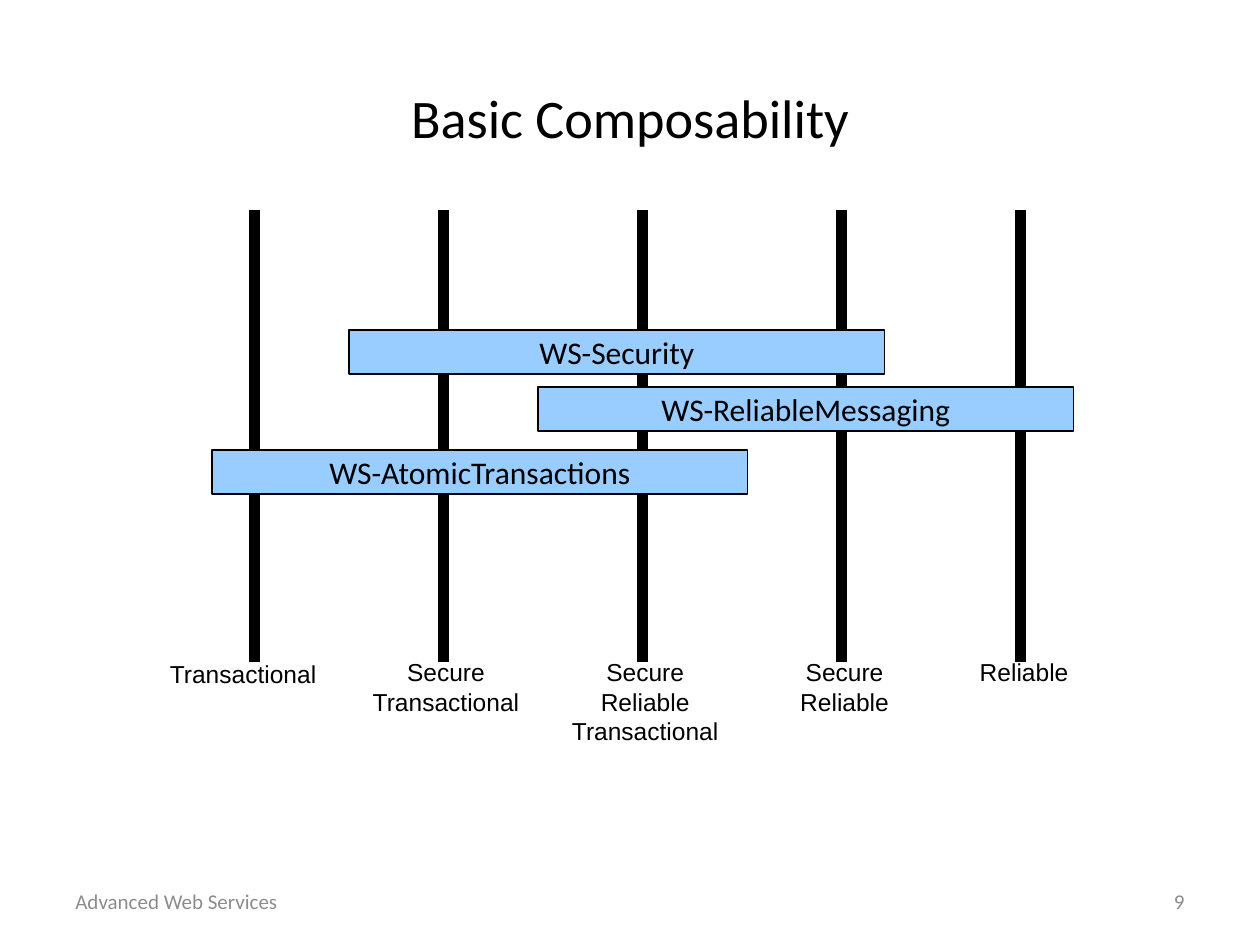
from pptx import Presentation
from pptx.dml.color import RGBColor
from pptx.enum.shapes import MSO_CONNECTOR, MSO_SHAPE
from pptx.enum.text import MSO_ANCHOR, PP_ALIGN
from pptx.oxml.ns import qn
from pptx.util import Pt
from lxml.etree import SubElement

BLACK = RGBColor(0x00, 0x00, 0x00)
GRAY = RGBColor(0x8C, 0x8C, 0x8C)
SKY = RGBColor(0x99, 0xCC, 0xFF)

LINE_TOP, LINE_BOTTOM = 120, 378
BAR_WIDTH, BAR_HEIGHT = 306, 25.2
FOOTER_TOP, FOOTER_WIDTH, FOOTER_HEIGHT = 500.4, 168, 28.8

COLUMNS = [
    (145.5, 90, 373.2, 105, PP_ALIGN.LEFT, "Transactional"),
    (253.5, 202.4, 372, 105, PP_ALIGN.CENTER, "Secure\nTransactional"),
    (367.2, 316.2, 372, 105, PP_ALIGN.CENTER, "Secure\nReliable\nTransactional"),
    (481, 448.8, 372, 67.6, PP_ALIGN.CENTER, "Secure\nReliable"),
    (583.2, 551.4, 372, 67.6, PP_ALIGN.CENTER, "Reliable"),
]
BARS = [
    (199.5, 188.7, "WS-Security"),
    (307.5, 221.2, "WS-ReliableMessaging"),
    (121.2, 257.2, "WS-AtomicTransactions"),
]


def write_text(shape, text, size, font="Calibri", color=BLACK,
               align=PP_ALIGN.CENTER, anchor=MSO_ANCHOR.MIDDLE, wrap=True):
    frame = shape.text_frame
    frame.text = text
    frame.word_wrap = wrap
    frame.vertical_anchor = anchor
    for para in frame.paragraphs:
        para.alignment = align
        for span in para.runs:
            span.font.name = font
            span.font.size = Pt(size)
            span.font.color.rgb = color


def add_title(page, text):
    title = page.shapes.title
    title.left, title.top = Pt(36), Pt(21.6)
    title.width, title.height = Pt(648), Pt(90)
    write_text(title, text, 31)


def add_label(page, left, top, width, height, text, size, **style):
    box = page.shapes.add_textbox(Pt(left), Pt(top), Pt(width), Pt(height))
    write_text(box, text, size, **style)


def add_pillar(page, center):
    pillar = page.shapes.add_connector(
        MSO_CONNECTOR.STRAIGHT, Pt(center), Pt(LINE_TOP), Pt(center), Pt(LINE_BOTTOM))
    pillar.line.color.rgb = BLACK
    pillar.line.width = Pt(6)
    SubElement(pillar._element.spPr, qn("a:effectLst"))


def add_bar(page, left, top, text):
    bar = page.shapes.add_shape(
        MSO_SHAPE.RECTANGLE, Pt(left), Pt(top), Pt(BAR_WIDTH), Pt(BAR_HEIGHT))
    bar.shadow.inherit = False
    bar.fill.solid()
    bar.fill.fore_color.rgb = SKY
    bar.line.color.rgb = BLACK
    bar.line.width = Pt(1)
    write_text(bar, text, 18)


def main():
    deck = Presentation()
    deck.slide_width, deck.slide_height = Pt(720), Pt(540)
    page = deck.slides.add_slide(deck.slide_layouts[5])
    add_title(page, "Basic Composability")
    for left, align, text in [(36, PP_ALIGN.LEFT, "Advanced Web Services"),
                              (516, PP_ALIGN.RIGHT, "9")]:
        add_label(page, left, FOOTER_TOP, FOOTER_WIDTH, FOOTER_HEIGHT, text, 12,
                  color=GRAY, align=align)
    for center, *_ in COLUMNS:
        add_pillar(page, center)
    for left, top, text in BARS:
        add_bar(page, left, top, text)
    for _, left, top, width, align, text in COLUMNS:
        height = 7.2 + 16.8 * len(text.splitlines())
        add_label(page, left, top, width, height, text, 14, font="Arial",
                  align=align, anchor=MSO_ANCHOR.TOP, wrap=False)
    deck.save("out.pptx")


if __name__ == "__main__":
    main()
